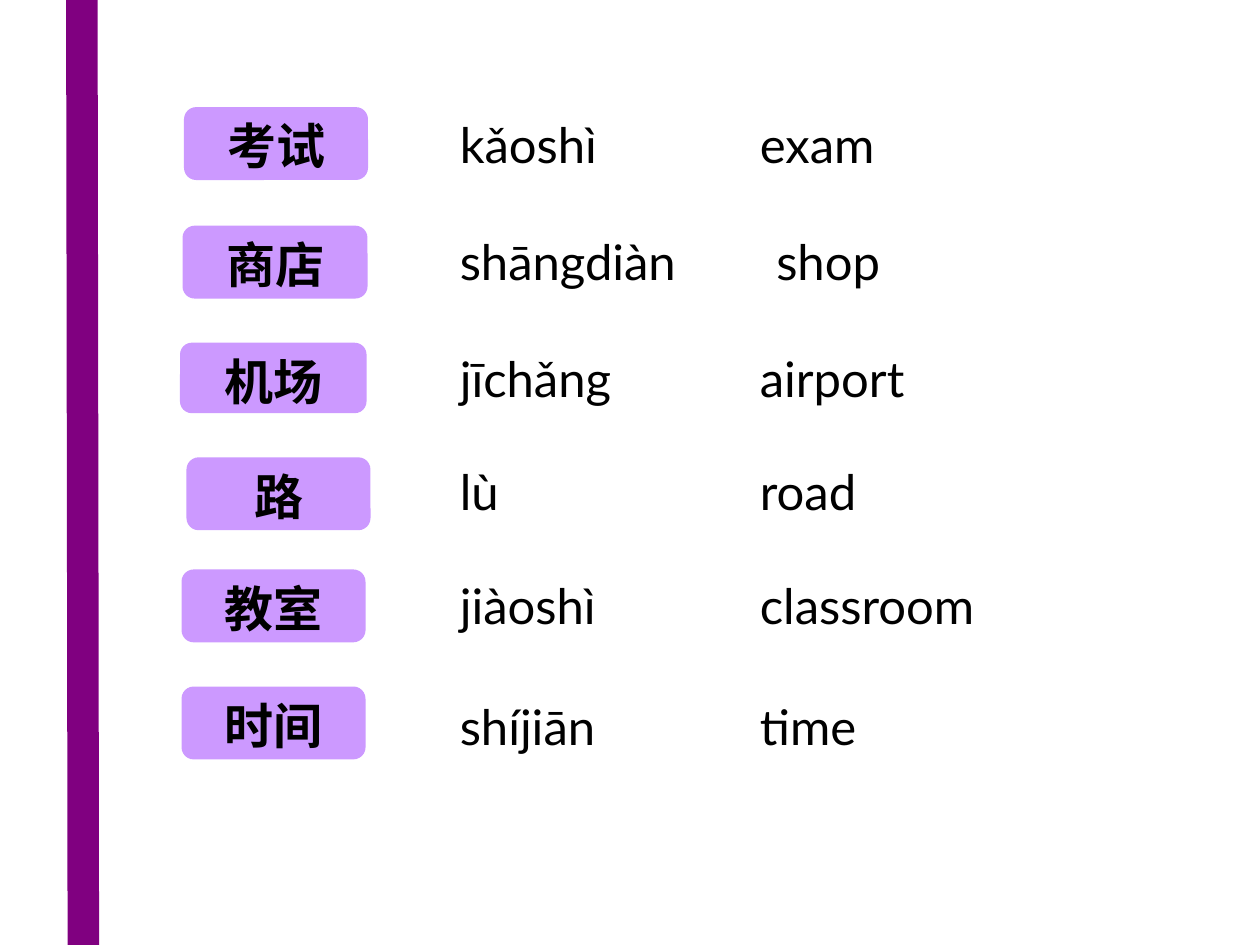
import collections

import pptx
import pptx.dml.color
import pptx.enum.shapes
import pptx.enum.text
import pptx.oxml.ns
import pptx.util
from lxml import etree
from pptx.util import Cm

Box = collections.namedtuple("Box", "left top width height")
Word = collections.namedtuple(
    "Word", "hanzi pinyin english badge_box gloss_box tab font")

GLOSS_LEFT = 9.02
LINE_HEIGHT = 1.46
WORDS = [
    Word("考试", "kǎoshì", "exam", Box(3.71, 2.16, 3.71, 1.47),
         Box(GLOSS_LEFT, 2.18, 9.14, LINE_HEIGHT), 6.05, "Calibri"),
    Word("商店", "shāngdiàn", "shop", Box(3.68, 4.55, 3.73, 1.47),
         Box(GLOSS_LEFT, 4.55, 9.32, LINE_HEIGHT), 6.38, "Calibri"),
    Word("机场", "jīchǎng", "airport", Box(3.63, 6.91, 3.76, 1.42),
         Box(GLOSS_LEFT, 6.91, 10.01, LINE_HEIGHT), 6.05, "Calibri"),
    Word("路", "lù", "road", Box(3.76, 9.22, 3.71, 1.47),
         Box(GLOSS_LEFT, 9.17, 8.81, LINE_HEIGHT), 6.05, "Arial"),
    Word("教室", "jiàoshì", "classroom", Box(3.66, 11.48, 3.71, 1.47),
         Box(GLOSS_LEFT, 11.48, 11.2, LINE_HEIGHT), 6.05, "Calibri"),
    Word("时间", "shíjiān", "time", Box(3.66, 13.84, 3.71, 1.47),
         Box(GLOSS_LEFT, 13.92, 8.97, LINE_HEIGHT), 6.05, "Calibri"),
]


def colour(value):
    return pptx.dml.color.RGBColor.from_string(value)


def place(box):
    return [Cm(length) for length in box]


def add_text(shapes, box, text, font, bold=False):
    """Add a one-line text box and return its paragraph."""
    frame = shapes.add_textbox(*place(box)).text_frame
    frame.word_wrap = True
    para = frame.paragraphs[0]
    span = para.add_run()
    span.text = text
    span.font.name = font
    span.font.size = pptx.util.Pt(28)
    span.font.bold = bold
    span.font.color.rgb = colour("000000")
    return para


def add_tab_stop(para, position):
    properties = para._p.get_or_add_pPr()
    tabs = etree.SubElement(properties, pptx.oxml.ns.qn("a:tabLst"))
    etree.SubElement(tabs, pptx.oxml.ns.qn("a:tab"),
                     pos=str(Cm(position)), algn="l")


def add_badge(page, box, hanzi, font):
    """Group a rounded rectangle with its centred word."""
    shapes = page.shapes.add_group_shape().shapes
    plate = shapes.add_shape(
        pptx.enum.shapes.MSO_SHAPE.ROUNDED_RECTANGLE, *place(box))
    plate.shadow.inherit = False
    plate.fill.solid()
    plate.fill.fore_color.rgb = colour("CC99FF")
    plate.line.fill.background()

    width = 0.5 + len(hanzi)
    label_box = Box(box.left + (box.width - width) / 2, box.top + 0.05,
                    width, 1.47)
    para = add_text(shapes, label_box, hanzi, font, bold=True)
    para.alignment = pptx.enum.text.PP_ALIGN.CENTER


def add_gloss(page, box, pinyin, english, tab):
    """Write the pinyin and, at the tab stop, the English meaning."""
    para = add_text(page.shapes, box, f"{pinyin}\t{english}", "Lato")
    add_tab_stop(para, tab)


def add_side_bar(page, box):
    bar = page.shapes.add_connector(
        pptx.enum.shapes.MSO_CONNECTOR.STRAIGHT,
        Cm(box.left + box.width), Cm(box.top + box.height),
        Cm(box.left), Cm(box.top))
    bar.line.color.rgb = colour("800080")
    bar.line.width = pptx.util.Pt(18)
    etree.SubElement(bar._element.spPr, pptx.oxml.ns.qn("a:effectLst"))


def main():
    deck = pptx.Presentation()
    deck.slide_width, deck.slide_height = Cm(25.4), Cm(19.05)
    page = deck.slides.add_slide(deck.slide_layouts[6])

    for word in WORDS:
        add_gloss(page, word.gloss_box, word.pinyin, word.english, word.tab)
    add_side_bar(page, Box(1.65, 0, 0.03, 19.1))
    for word in WORDS:
        # A label needs 1.01 cm for each character plus its insets.
        add_badge(page, word.badge_box, word.hanzi, word.font)

    deck.save("out.pptx")


if __name__ == "__main__":
    main()
